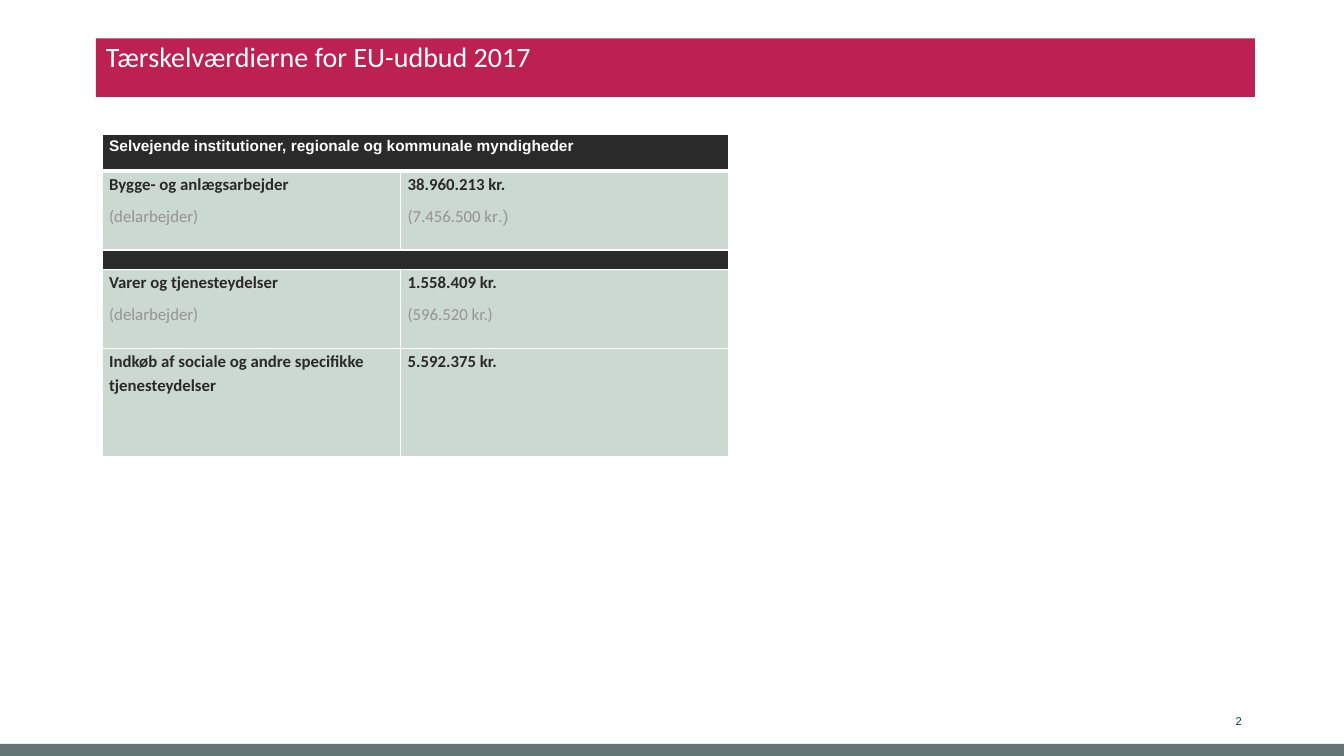
from dataclasses import dataclass

from lxml import etree
from pptx import Presentation
from pptx.dml.color import RGBColor
from pptx.enum.shapes import MSO_SHAPE
from pptx.enum.text import MSO_ANCHOR, MSO_AUTO_SIZE, PP_ALIGN
from pptx.oxml.ns import qn
from pptx.util import Pt

RECTANGLE = MSO_SHAPE.RECTANGLE
TOP, MIDDLE = MSO_ANCHOR.TOP, MSO_ANCHOR.MIDDLE
LEFT, RIGHT = PP_ALIGN.LEFT, PP_ALIGN.RIGHT
NO_AUTOFIT = MSO_AUTO_SIZE.NONE

COLORS = {
    "white": "FFFFFF",
    "crimson": "BC2152",
    "slate": "637575",
    "dark": "2A2A2A",
    "sage": "CCD8D2",
    "grey": "949494",
    "teal": "063A40",
}


@dataclass(frozen=True)
class TextStyle:
    font: str
    size: float
    color: str
    bold: bool = False


@dataclass(frozen=True)
class Span:
    text: str
    style: TextStyle


@dataclass(frozen=True)
class TableRow:
    height: float
    fill: str
    cells: tuple[tuple[tuple[Span, ...], ...], ...]
    merged: bool = False


TITLE = TextStyle("Calibri", 20, "white")
NUMBER = TextStyle("Arial", 8, "teal")
HEADING = TextStyle("Arial", 11, "white", True)
STRONG = TextStyle("Calibri", 12, "dark", True)
MUTED = TextStyle("Calibri", 12, "grey")
MUTED_ARIAL = TextStyle("Arial", 12, "grey")

PARTIAL_WORK = (Span("(delarbejder)", MUTED),)
COLUMN_WIDTHS = (213.2, 234.7)
ROWS = (
    TableRow(26, "dark", (
        ((Span("Selvejende institutioner, regionale og kommunale myndigheder", HEADING),),),
    ), merged=True),
    TableRow(56.4, "sage", (
        ((Span("Bygge- og anlægsarbejder", STRONG),), PARTIAL_WORK),
        ((Span("38.960.213 kr.", STRONG),),
         (Span("(7.456.500 kr", MUTED), Span(".)", MUTED_ARIAL))),
    )),
    TableRow(14, "dark", (), merged=True),
    TableRow(56.4, "sage", (
        ((Span("Varer og tjenesteydelser", STRONG),), PARTIAL_WORK),
        ((Span("1.558.409 kr.", STRONG),), (Span("(596.520 kr.)", MUTED),)),
    )),
    TableRow(77, "sage", (
        ((Span("Indkøb af sociale og andre specifikke tjenesteydelser", STRONG),),),
        ((Span("5.592.375 kr.", STRONG),),),
    )),
)


def rgb(color: str) -> RGBColor:
    return RGBColor.from_string(COLORS[color])


def paint(shape, color: str) -> None:
    shape.fill.solid()
    shape.fill.fore_color.rgb = rgb(color)


def set_attributes(target, values: dict) -> None:
    for name, value in values.items():
        setattr(target, name, value)


def add_span(para, span: Span) -> None:
    run = para.add_run()
    run.text = span.text
    style = span.style
    set_attributes(run.font, {"name": style.font, "size": Pt(style.size), "bold": style.bold})
    run.font.color.rgb = rgb(style.color)


def add_border(cell, side: str, width: float) -> None:
    line = etree.SubElement(cell._tc.get_or_add_tcPr(), qn(f"a:ln{side}"), w=str(Pt(width)))
    fill = etree.SubElement(line, qn("a:solidFill"))
    etree.SubElement(fill, qn("a:srgbClr"), val=COLORS["white"])


def fill_cell(cell, paragraphs: tuple[tuple[Span, ...], ...]) -> None:
    frame = cell.text_frame
    if not paragraphs:
        # A small end mark keeps an empty cell from stretching its row.
        frame.paragraphs[0]._p.get_or_add_endParaRPr().set("sz", "800")
    for index, spans in enumerate(paragraphs):
        para = frame.add_paragraph() if index else frame.paragraphs[0]
        para.line_spacing = 1.15
        if index:
            para.space_before = Pt(6)
        for span in spans:
            add_span(para, span)


def add_title(page) -> None:
    title = page.shapes.title
    set_attributes(title, {"left": Pt(68.4), "top": Pt(27.4), "width": Pt(828), "height": Pt(41.8)})
    paint(title, "crimson")
    frame = title.text_frame
    set_attributes(frame, {"vertical_anchor": TOP, "auto_size": NO_AUTOFIT, "word_wrap": True})
    para = frame.paragraphs[0]
    set_attributes(para, {"alignment": LEFT, "line_spacing": 0.9})
    add_span(para, Span("Tærskelværdierne for EU-udbud 2017", TITLE))


def add_threshold_table(page) -> None:
    table = page.shapes.add_table(
        len(ROWS), len(COLUMN_WIDTHS), Pt(72.8), Pt(96.2),
        Pt(sum(COLUMN_WIDTHS)), Pt(sum(row.height for row in ROWS)),
    ).table
    set_attributes(table, {"first_row": False, "horz_banding": False})
    for column, width in zip(table.columns, COLUMN_WIDTHS):
        column.width = Pt(width)
    for row_index, row in enumerate(ROWS):
        table.rows[row_index].height = Pt(row.height)
        for column_index in range(len(COLUMN_WIDTHS)):
            cell = table.cell(row_index, column_index)
            set_attributes(cell, {
                "margin_left": Pt(5.2), "margin_right": Pt(5.2),
                "margin_top": Pt(0), "margin_bottom": Pt(0),
            })
            widths = {"L": 1, "R": 1, "T": 3 if row_index == 1 else 1, "B": 3 if row_index == 0 else 1}
            for side, width in widths.items():
                add_border(cell, side, width)
            paint(cell, row.fill)
            fill_cell(cell, row.cells[column_index] if column_index < len(row.cells) else ())
        if row.merged:
            table.cell(row_index, 0).merge(table.cell(row_index, len(COLUMN_WIDTHS) - 1))


def add_footer(page) -> None:
    bar = page.shapes.add_shape(RECTANGLE, Pt(0), Pt(531.4), Pt(960), Pt(8.6))
    bar.shadow.inherit = False
    paint(bar, "slate")
    bar.line.fill.background()
    box = page.shapes.add_textbox(Pt(857.5), Pt(500.4), Pt(36.7), Pt(28.8))
    set_attributes(box.text_frame, {"word_wrap": True, "vertical_anchor": MIDDLE})
    para = box.text_frame.paragraphs[0]
    para.alignment = RIGHT
    add_span(para, Span("2", NUMBER))


def main() -> None:
    deck = Presentation()
    set_attributes(deck, {"slide_width": Pt(960), "slide_height": Pt(540)})
    page = deck.slides.add_slide(deck.slide_layouts.get_by_name("Title Only"))
    add_title(page)
    add_threshold_table(page)
    add_footer(page)
    deck.save("out.pptx")


if __name__ == "__main__":
    main()
